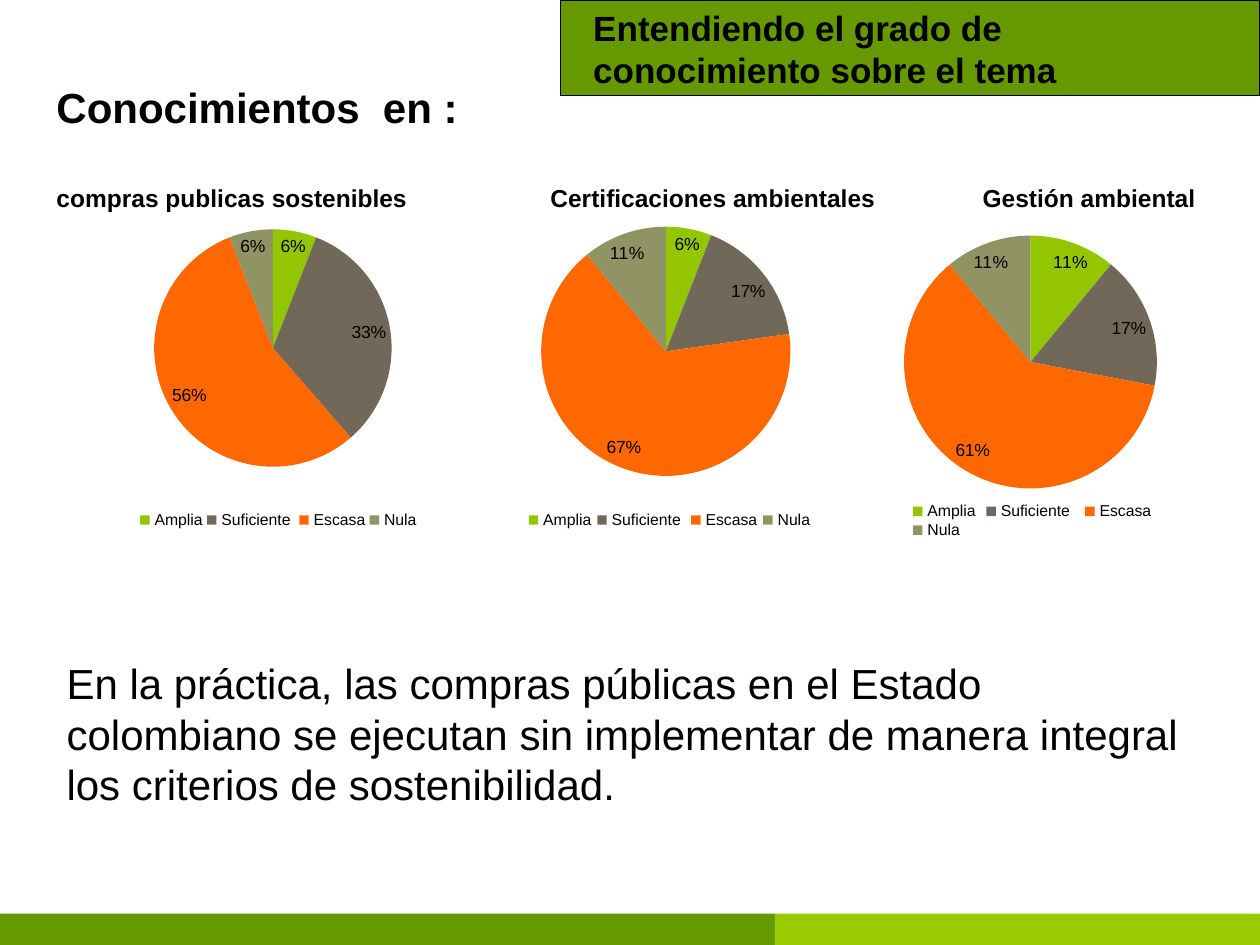
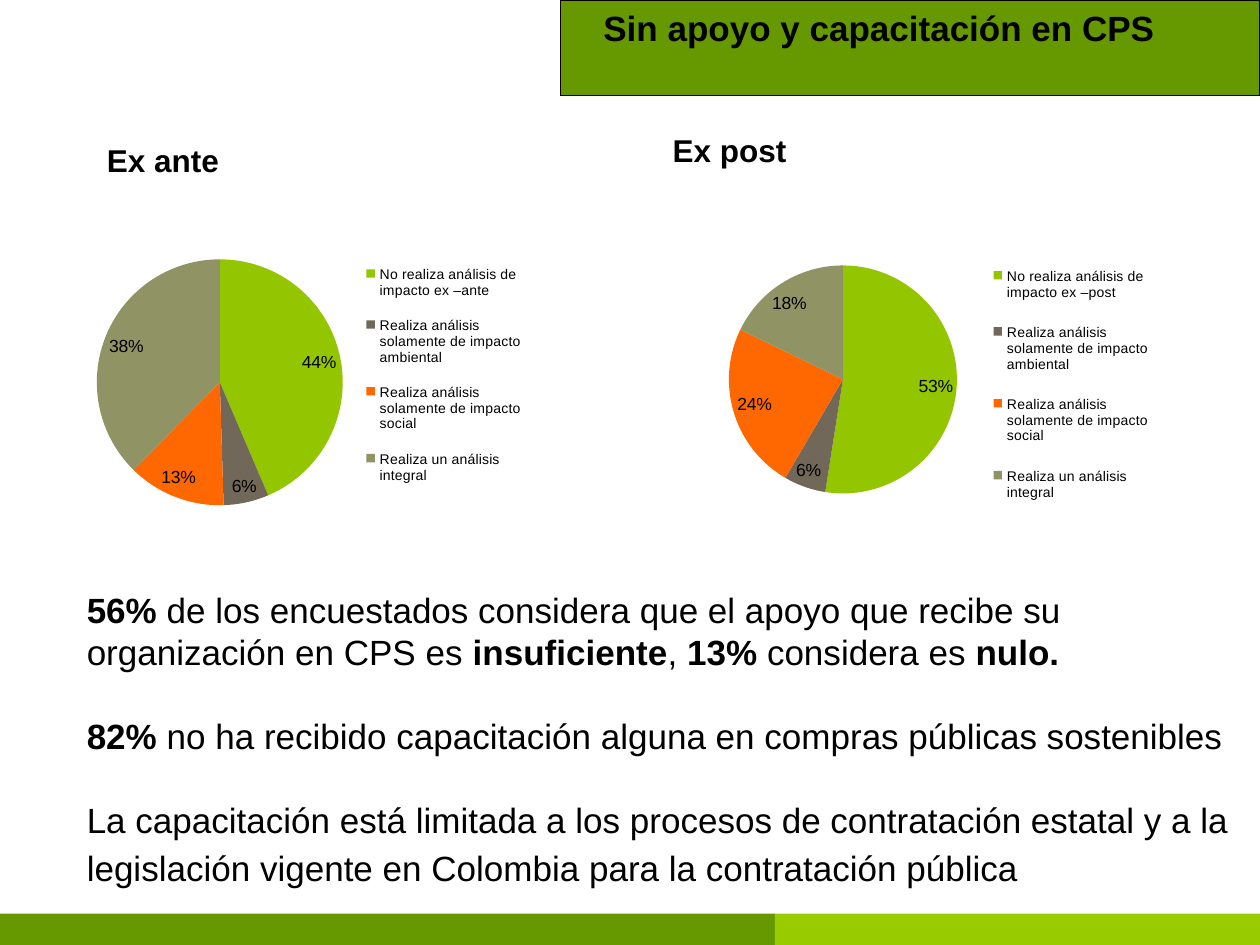
from lxml import etree
from pptx import Presentation
from pptx import util as u
from pptx.chart import data as chart_data
from pptx.dml.color import RGBColor
from pptx.enum import chart as chart_enum, shapes, text
from pptx.oxml.ns import qn

COLORS = {
    "band": "669900", "footer": "99CC00", "text": "000000",
    "lime": "94C600", "brown": "71685A", "orange": "FF6700", "olive": "909465",
}
SLICES = ("lime", "brown", "orange", "olive")
FONT = "Arial"
LEVELS = ("Amplia", "Suficiente ", "Escasa", "Nula")

# Each chart: box in inches, values, plot and legend areas as chart fractions
KNOWLEDGE_CHARTS = [
    ((0.76, 1.71, 2.9, 2.6), (6, 33, 56, 6),
     (0.16, 0.04, 0.65, 0.73), (0.11, 0.9, 0.78, 0.06)),
    ((3.83, 1.71, 2.91, 2.6), (6, 17, 67, 11),
     (0.16, 0.03, 0.68, 0.77), (0.11, 0.9, 0.8, 0.06)),
    ((6.9, 1.79, 2.75, 2.52), (11, 17, 61, 11),
     (0.1, 0.03, 0.73, 0.8), (0.11, 0.87, 0.72, 0.12)),
]
IMPACT_CHARTS = [
    ("ante", (0.75, 1.07, 2.12, 0.4), (0.52, 1.79, 3.95, 2.44), (44, 6, 13, 38),
     (0.06, 0.11, 0.5, 0.8), (0.59, 0.07, 0.34, 0.83)),
    ("post", (5.24, 0.99, 2.36, 0.4), (5.64, 1.79, 3.62, 2.42), (53, 6, 24, 18),
     (0.04, 0.13, 0.5, 0.75), (0.6, 0.06, 0.38, 0.92)),
]


def color(name):
    return RGBColor.from_string(COLORS[name])


def inches(box):
    return [u.Inches(length) for length in box]


def make_layout(area, inner=False):
    """Return a c:layout element that fixes an area given in chart fractions."""
    layout = etree.Element(qn("c:layout"))
    manual = etree.SubElement(layout, qn("c:manualLayout"))
    settings = [("layoutTarget", "inner")] if inner else []
    settings += [("xMode", "edge"), ("yMode", "edge"), *zip("xywh", area)]
    for tag, value in settings:
        etree.SubElement(manual, qn(f"c:{tag}")).set("val", str(value))
    return layout


class Deck:
    def __init__(self):
        self.presentation = Presentation()
        self.presentation.slide_width = u.Inches(10)
        self.presentation.slide_height = u.Inches(7.5)
        self.slide = None

    def start_slide(self, title, title_left):
        layout = self.presentation.slide_layouts[6]
        self.slide = self.presentation.slides.add_slide(layout)
        self.band((4.45, 0, 5.55, 0.76), "band", outlined=True)
        self.band((0, 7.25, 6.15, 0.25), "band")
        self.band((6.15, 7.25, 3.85, 0.25), "footer")
        self.text((title_left, 0, 5.12, 0.77), [[(title, True)]], 20)

    def band(self, box, fill, outlined=False):
        shape = self.slide.shapes.add_shape(
            shapes.MSO_SHAPE.RECTANGLE, *inches(box))
        shape.shadow.inherit = False
        shape.fill.solid()
        shape.fill.fore_color.rgb = color(fill)
        if outlined:
            shape.line.color.rgb = color("text")
            shape.line.width = u.Pt(0.75)
        else:
            shape.line.fill.background()

    def text(self, box, paragraphs, size):
        """Add a text box; each paragraph is a list of (text, bold) runs."""
        frame = self.slide.shapes.add_textbox(*inches(box)).text_frame
        frame.word_wrap = True
        frame.vertical_anchor = text.MSO_ANCHOR.TOP
        for index, runs in enumerate(paragraphs):
            paragraph = frame.add_paragraph() if index else frame.paragraphs[0]
            for words, bold in runs:
                run = paragraph.add_run()
                run.text = words
                self.style_font(run.font, size)
                run.font.bold = bold
        return frame.paragraphs

    def style_font(self, font, size):
        font.name = FONT
        font.size = u.Pt(size)
        font.color.rgb = color("text")

    def tab_stops(self, paragraph, positions):
        tabs = etree.SubElement(paragraph._p.get_or_add_pPr(), qn("a:tabLst"))
        for position in positions:
            tab = etree.SubElement(tabs, qn("a:tab"))
            tab.set("pos", str(u.Inches(position)))
            tab.set("algn", "l")

    def pie(self, box, categories, values, plot_area, legend_area, legend_size):
        data = chart_data.CategoryChartData()
        data.categories = categories
        data.add_series("Series 1", values)
        chart = self.slide.shapes.add_chart(
            chart_enum.XL_CHART_TYPE.PIE, *inches(box), data).chart
        chart.has_title = False
        self.style_font(chart.font, 10)

        plot = chart.plots[0]
        plot.vary_by_categories = True
        for index, name in enumerate(SLICES):
            point = plot.series[0].points[index]
            point.format.fill.solid()
            point.format.fill.fore_color.rgb = color(name)
            point.format.line.fill.background()
        plot.has_data_labels = True
        labels = plot.data_labels
        labels.show_value = True
        labels.number_format = '0"%"'
        labels.number_format_is_linked = False
        labels.position = chart_enum.XL_LABEL_POSITION.BEST_FIT
        self.style_font(labels.font, 10)

        chart.has_legend = True
        legend = chart.legend
        legend.position = chart_enum.XL_LEGEND_POSITION.RIGHT
        legend.include_in_layout = False
        self.style_font(legend.font, legend_size)
        for layout in chart._chartSpace.xpath(".//c:layout"):
            layout.getparent().remove(layout)
        chart._chartSpace.xpath(".//c:plotArea")[0].insert(
            0, make_layout(plot_area, inner=True))
        legend._element.find(qn("c:legendPos")).addnext(
            make_layout(legend_area))


def build_knowledge_slide(deck):
    deck.start_slide("Entendiendo el grado de conocimiento sobre el tema", 4.61)
    for box, values, plot_area, legend_area in KNOWLEDGE_CHARTS:
        deck.pie(box, LEVELS, values, plot_area, legend_area, 9)
    heading, topics = deck.text((0.35, 0.6, 9.37, 1.13), [
        [("Conocimientos  en :", True)],
        [("compras publicas sostenibles\tCertificaciones ambientales"
          "\tGestión ambiental", True)],
    ], 14)
    heading.runs[0].font.size = u.Pt(24)
    topics.space_before = u.Pt(29)
    deck.tab_stops(topics, (3.92, 7.35))
    deck.text((0.43, 5.17, 9.21, 1.31), [[(
        "En la práctica, las compras públicas en el Estado colombiano se "
        "ejecutan sin implementar de manera integral los criterios de "
        "sostenibilidad.", False)]], 24)


def build_support_slide(deck):
    deck.start_slide("Sin apoyo y capacitación en CPS", 4.69)
    for moment, heading_box, box, values, plot_area, legend_area in IMPACT_CHARTS:
        categories = (
            f"No realiza análisis de impacto ex –{moment}",
            "Realiza análisis solamente de impacto ambiental",
            "Realiza análisis solamente de impacto social",
            "Realiza un análisis integral",
        )
        deck.text(heading_box, [[(f"Ex {moment}", True)]], 18)
        deck.pie(box, categories, values, plot_area, legend_area, 8)
    support, training, scope = deck.text((0.59, 4.62, 9.41, 2.6), [
        [("56% ", True),
         ("de los encuestados considera que el apoyo que recibe su "
          "organización en CPS es ", False),
         ("insuficiente", True), (", ", False), ("13% ", True),
         ("considera es ", False), ("nulo.", True)],
        [("82% ", True),
         ("no ha recibido capacitación alguna en compras públicas "
          "sostenibles", False)],
        [("La capacitación está limitada a los procesos de contratación "
          "estatal y a la legislación vigente en Colombia para la "
          "contratación pública", False)],
    ], 20)
    training.space_before = u.Pt(24)
    scope.space_before = u.Pt(20)
    scope.line_spacing = 1.16


def main():
    deck = Deck()
    build_knowledge_slide(deck)
    build_support_slide(deck)
    deck.presentation.save("out.pptx")


if __name__ == "__main__":
    main()
